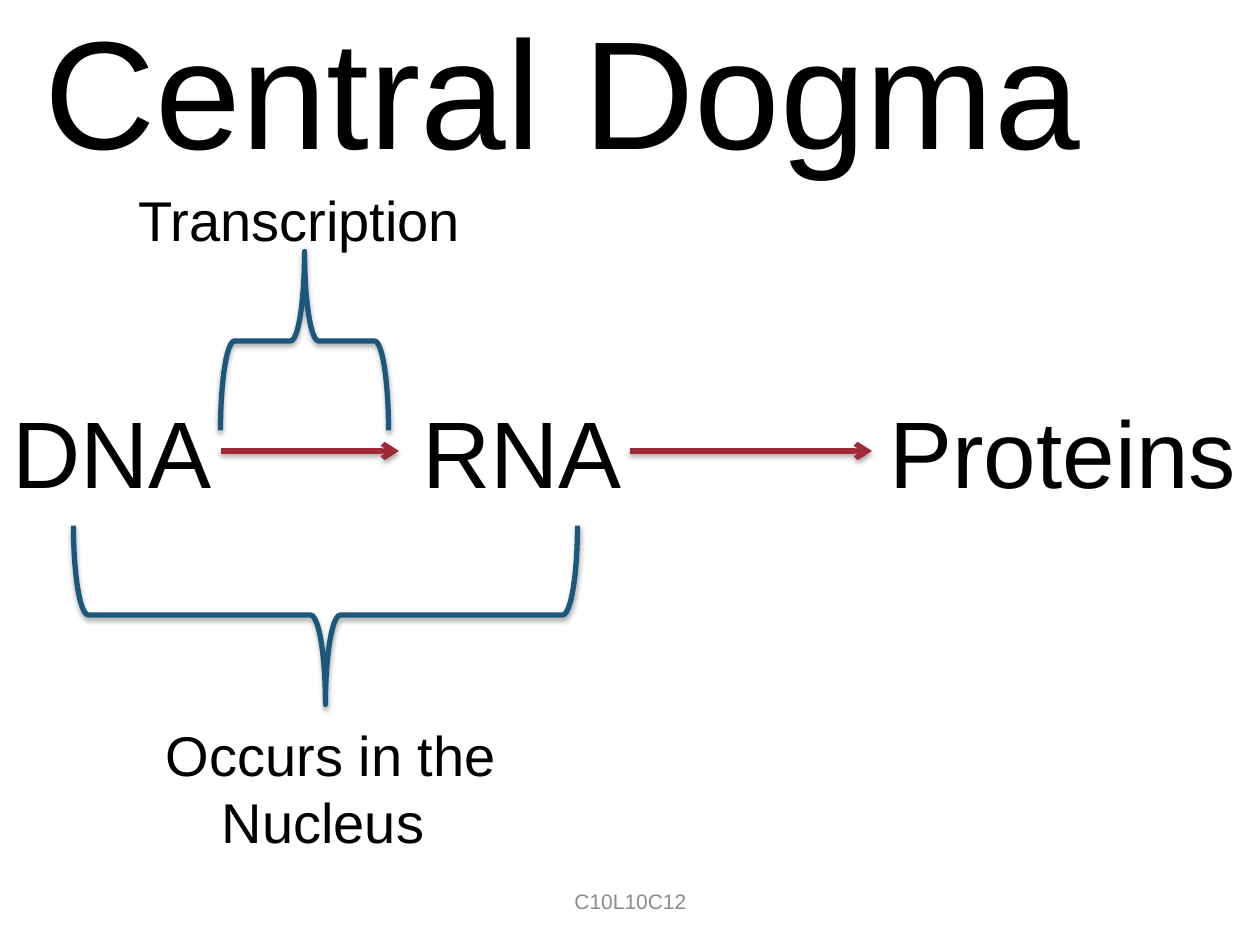
"""Build the Central Dogma slide: DNA to RNA to proteins."""
from lxml import etree
from pptx import Presentation
from pptx.dml.color import RGBColor
from pptx.enum.shapes import MSO_CONNECTOR, MSO_SHAPE
from pptx.enum.text import MSO_ANCHOR, PP_ALIGN
from pptx.oxml import parse_xml
from pptx.oxml.ns import nsdecls, qn
from pptx.util import Pt

SCALE = 914400 / 126
COLORS = {"text": "000000", "footer": "8C8C8C", "arrow": "9F2936", "brace": "1B587C"}
SHADOW = (
    f'<a:effectLst {nsdecls("a")}>'
    '<a:outerShdw blurRad="39370" dist="22860" dir="5400000" rotWithShape="0">'
    '<a:srgbClr val="000000"><a:alpha val="35000"/></a:srgbClr>'
    '</a:outerShdw></a:effectLst>'
)


def px(*lengths):
    return [round(length * SCALE) for length in lengths]


def style_stroke(shape, color):
    shape.line.color.rgb = RGBColor.from_string(COLORS[color])
    shape.line.width = Pt(3)
    properties = shape._element.spPr
    properties.append(parse_xml(SHADOW))
    return properties.find(qn("a:ln"))


presentation = Presentation()
presentation.slide_width, presentation.slide_height = px(1260, 945)
slide = presentation.slides.add_slide(presentation.slide_layouts[5])
shapes = slide.shapes

title = shapes.title
title.left, title.top, title.width, title.height = px(32, 23, 1129, 130)

labels = [
    (title, "Central Dogma", 88, "text", PP_ALIGN.LEFT, MSO_ANCHOR.MIDDLE),
]
for box, text, size, color, align, anchor in [
    ((0, 388, 294, 116), "DNA", 54, "text", PP_ALIGN.LEFT, MSO_ANCHOR.TOP),
    ((410, 388, 325, 127), "RNA", 54, "text", PP_ALIGN.LEFT, MSO_ANCHOR.TOP),
    ((877, 388, 383, 127), "Proteins", 54, "text", PP_ALIGN.LEFT, MSO_ANCHOR.TOP),
    ((126, 179, 368, 81), "Transcription", 32, "text", PP_ALIGN.LEFT, MSO_ANCHOR.TOP),
    ((147, 714, 368, 149), "Occurs in the Nucleus ", 32, "text", PP_ALIGN.CENTER, MSO_ANCHOR.TOP),
    ((431, 876, 399, 50), "C10L10C12", 12, "footer", PP_ALIGN.CENTER, MSO_ANCHOR.MIDDLE),
]:
    labels.append((shapes.add_textbox(*px(*box)), text, size, color, align, anchor))

for shape, text, size, color, align, anchor in labels:
    frame = shape.text_frame
    frame.text = text
    frame.word_wrap = True
    frame.vertical_anchor = anchor
    paragraph = frame.paragraphs[0]
    paragraph.alignment = align
    paragraph.font.name = "Arial"
    paragraph.font.size = Pt(size)
    paragraph.font.color.rgb = RGBColor.from_string(COLORS[color])

for start, end in [(221, 399), (630, 872)]:
    arrow = shapes.add_connector(MSO_CONNECTOR.STRAIGHT, *px(start, 451, end, 451))
    outline = style_stroke(arrow, "arrow")
    etree.SubElement(outline, qn("a:tailEnd"), type="arrow")

for box, rotation in [((215, 257, 179, 168), 90), ((236, 363, 179, 504), 270)]:
    brace = shapes.add_shape(MSO_SHAPE.LEFT_BRACE, *px(*box))
    brace.rotation = rotation
    brace.fill.background()
    style_stroke(brace, "brace")

presentation.save("out.pptx")
